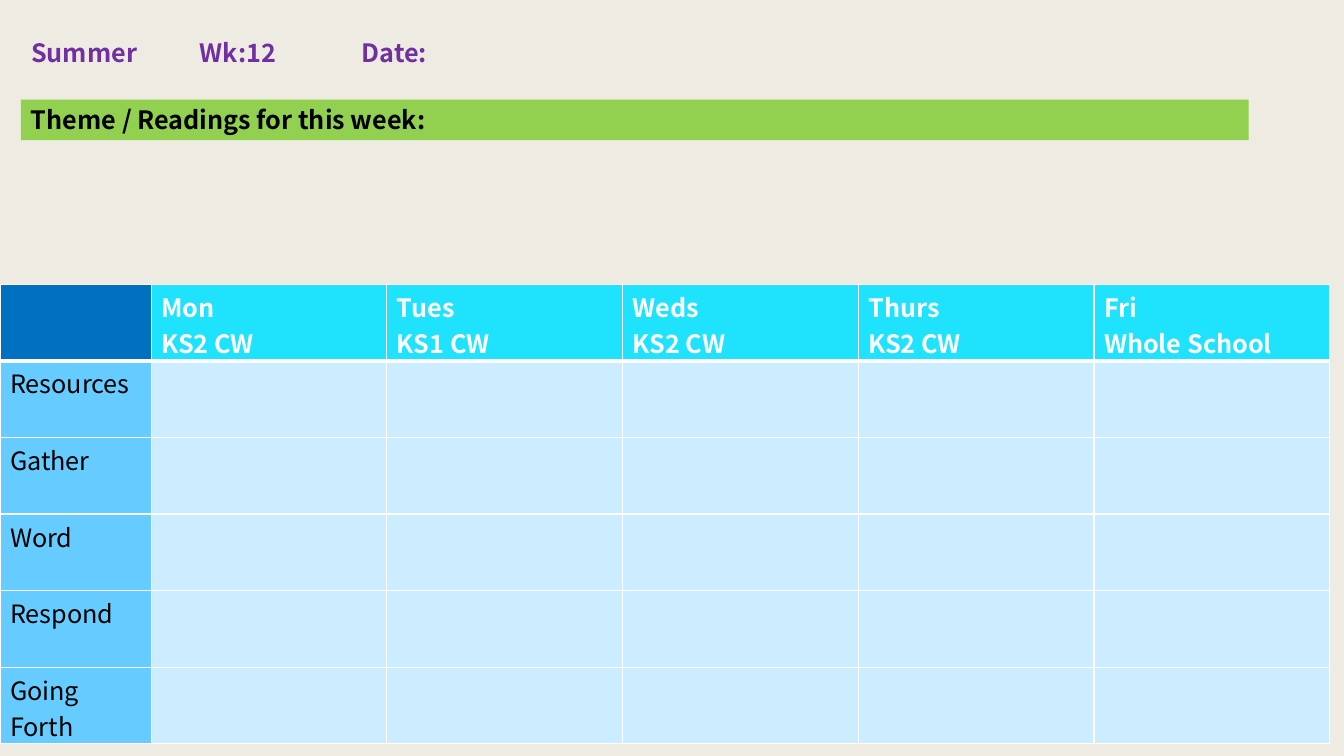
"""Build a weekly collective worship planning slide."""
from lxml.etree import SubElement
from pptx import Presentation
from pptx.dml.color import RGBColor
from pptx.enum.shapes import MSO_SHAPE
from pptx.enum.text import MSO_ANCHOR, MSO_AUTO_SIZE, PP_ALIGN
from pptx.oxml.ns import qn
from pptx.util import Cm, Pt

FONT = "Noto Sans CJK JP"
COLOURS = {
    "background": "EEEBE2", "heading": "7030A0", "theme": "92D050",
    "corner": "0070C0", "day": "1FE3FD", "stage": "66CCFF", "plan": "CCECFF",
    "white": "FFFFFF", "black": "000000",
}
DAYS = [("Mon", "KS2 CW"), ("Tues", "KS1 CW"), ("Weds", "KS2 CW"),
        ("Thurs", "KS2 CW"), ("Fri", "Whole School")]
STAGES = ["Resources", "Gather", "Word", "Respond", "Going Forth"]
STAGE_WIDTH, DAY_WIDTH, ROW_HEIGHT = Cm(3.81), Cm(5.94), Cm(1.93)


def paint(fill, colour):
    fill.solid()
    fill.fore_color.rgb = RGBColor.from_string(COLOURS[colour])


def write(frame, lines, colour, bold=True):
    for index, line in enumerate(lines):
        paragraph = frame.paragraphs[0] if index == 0 else frame.add_paragraph()
        paragraph.alignment = PP_ALIGN.LEFT
        run = paragraph.add_run()
        run.text = line
        run.font.name = FONT
        run.font.size = Pt(18)
        run.font.bold = bold
        run.font.color.rgb = RGBColor.from_string(COLOURS[colour])


def place(part, left, top, width, height):
    part.left, part.top, part.width, part.height = left, top, width, height


def add_heading(slide):
    heading = slide.shapes.title
    place(heading, Cm(0.53), Cm(0.81), Cm(32.97), Cm(1.02))
    frame = heading.text_frame
    frame.word_wrap = True
    frame.auto_size = MSO_AUTO_SIZE.SHAPE_TO_FIT_TEXT
    frame.vertical_anchor = MSO_ANCHOR.TOP
    properties = frame.paragraphs[0]._p.get_or_add_pPr()
    stops = SubElement(properties, qn("a:tabLst"))
    for position in (Cm(4.25), Cm(8.33)):
        SubElement(stops, qn("a:tab"), pos=str(position), algn="l")
    write(frame, ["Summer\tWk:12\tDate:"], "heading")


def add_theme_bar(slide):
    theme = slide.shapes.add_shape(
        MSO_SHAPE.RECTANGLE, Cm(0.53), Cm(2.51), Cm(30.94), Cm(1.02))
    theme.shadow.inherit = False
    paint(theme.fill, "theme")
    theme.line.fill.background()
    frame = theme.text_frame
    frame.word_wrap = True
    frame.auto_size = MSO_AUTO_SIZE.SHAPE_TO_FIT_TEXT
    frame.vertical_anchor = MSO_ANCHOR.TOP
    write(frame, ["Theme / Readings for this week:"], "black")


def add_border(cell, side, width):
    properties = cell._tc.get_or_add_tcPr()
    border = SubElement(properties, qn(f"a:ln{side}"), w=str(Pt(width)))
    solid = SubElement(border, qn("a:solidFill"))
    SubElement(solid, qn("a:srgbClr"), val=COLOURS["white"])


def style_cell(cell, colour, top_width=1, bottom_width=1):
    for side, width in zip("LRTB", (1, 1, top_width, bottom_width)):
        add_border(cell, side, width)
    paint(cell.fill, colour)
    cell.margin_top = Cm(0.1)
    cell.margin_bottom = Cm(0)


def add_planner(slide):
    planner = slide.shapes.add_table(
        len(STAGES) + 1, len(DAYS) + 1, Cm(0), Cm(7.16),
        STAGE_WIDTH + DAY_WIDTH * len(DAYS),
        ROW_HEIGHT * (len(STAGES) + 1)).table
    for row in planner.rows:
        row.height = ROW_HEIGHT
    for index, column in enumerate(planner.columns):
        column.width = DAY_WIDTH if index else STAGE_WIDTH
    style_cell(planner.cell(0, 0), "corner", bottom_width=3)
    for column, day in enumerate(DAYS, 1):
        cell = planner.cell(0, column)
        style_cell(cell, "day", bottom_width=3)
        write(cell.text_frame, day, "white")
    for row, stage in enumerate(STAGES, 1):
        top_width = 3 if row == 1 else 1
        for column in range(len(DAYS) + 1):
            style_cell(planner.cell(row, column),
                       "plan" if column else "stage", top_width)
        write(planner.cell(row, 0).text_frame, [stage], "black", bold=False)


def main():
    deck = Presentation()
    deck.slide_width, deck.slide_height = Cm(33.87), Cm(19.05)
    slide = deck.slides.add_slide(deck.slide_layouts[5])
    paint(slide.background.fill, "background")
    add_heading(slide)
    add_theme_bar(slide)
    add_planner(slide)
    deck.save("out.pptx")


if __name__ == "__main__":
    main()
